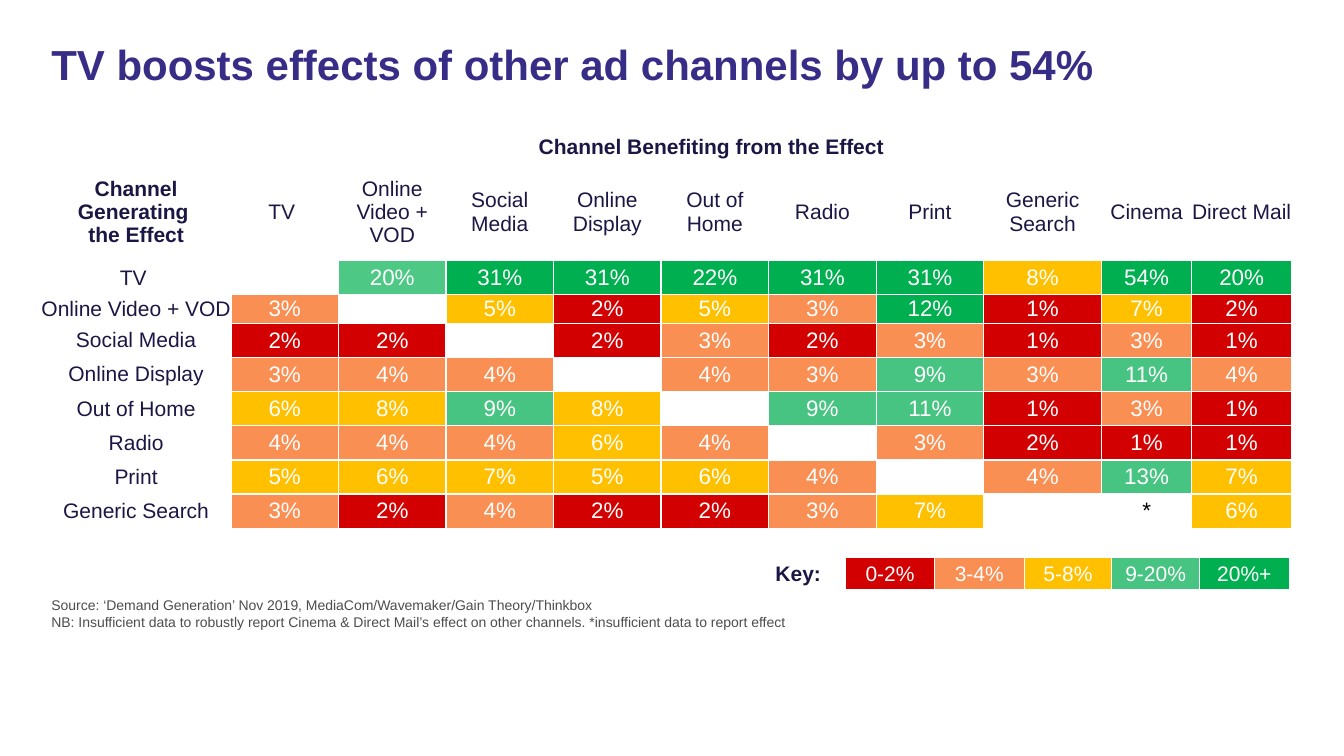
"""Build a slide with a heat-map table of how ad channels boost each other."""
from lxml.etree import SubElement
from pptx import Presentation
from pptx.dml.color import RGBColor
from pptx.enum.text import MSO_ANCHOR, MSO_AUTO_SIZE, PP_ALIGN
from pptx.oxml.ns import qn
from pptx.util import Cm, Pt

TITLE = "TV boosts effects of other ad channels by up to 54%"
SOURCE = (
    "Source: ‘Demand Generation’ Nov 2019, MediaCom/Wavemaker/Gain Theory/Thinkbox\v"
    "NB: Insufficient data to robustly report Cinema & Direct Mail’s effect on other channels. "
    "*insufficient data to report effect"
)
BENEFITING = "Channel Benefiting from the Effect"
GENERATING = "Channel Generating \nthe Effect"
CHANNELS = ["TV ", "Online Video + VOD", "Social Media", "Online Display", "Out of Home",
            "Radio", "Print", "Generic Search", "Cinema", "Direct Mail"]
EFFECTS = [
    [None, 20, 31, 31, 22, 31, 31, 8, 54, 20],
    [3, None, 5, 2, 5, 3, 12, 1, 7, 2],
    [2, 2, None, 2, 3, 2, 3, 1, 3, 1],
    [3, 4, 4, None, 4, 3, 9, 3, 11, 4],
    [6, 8, 9, 8, None, 9, 11, 1, 3, 1],
    [4, 4, 4, 6, 4, None, 3, 2, 1, 1],
    [5, 6, 7, 5, 6, 4, None, 4, 13, 7],
    [3, 2, 4, 2, 2, 3, 7, None, "*", 6],
]
NAVY, PURPLE, GREY, WHITE, BLACK = "1B1744", "372D87", "4D4D4D", "FFFFFF", "000000"
GREEN = "00B050"
BANDS = [(2, "0-2%", "D20000"), (4, "3-4%", "FA8F54"), (8, "5-8%", "FFC000"),
         (19, "9-20%", "47C482"), (100, "20%+", GREEN)]
SPECIAL_FILLS = {(0, 1): "4DC885", (1, 6): GREEN}

LEFT, WIDTH = 1.04, 31.5
COLUMN_WIDTHS = [4.78] + [2.71] * 7 + [2.97, 2.27, 2.52]
ROW_HEIGHTS = [0.82, 2.44, 0.86, 0.72] + [0.86] * 6
KEY_WIDTHS = [2.39, 2.24, 2.26, 2.21, 2.21, 2.26]


def color(hex_code):
    return RGBColor.from_string(hex_code)


def write(text_frame, text, size=15, hex_code=NAVY, bold=False, align=PP_ALIGN.CENTER,
          line_spacing=1.0):
    text_frame.text = text
    for paragraph in text_frame.paragraphs:
        paragraph.alignment = align
        paragraph.line_spacing = line_spacing
        paragraph.space_before = Pt(0)
        if not paragraph.runs:
            paragraph._p.get_or_add_endParaRPr().set("sz", str(size * 100))
        for run in paragraph.runs:
            run.font.name = "Arial"
            run.font.size = Pt(size)
            run.font.bold = bold
            run.font.color.rgb = color(hex_code)


def fill_placeholder(placeholder, text, top, height, **text_format):
    placeholder.left, placeholder.top = Cm(LEFT), Cm(top)
    placeholder.width, placeholder.height = Cm(WIDTH), Cm(height)
    frame = placeholder.text_frame
    frame.word_wrap = True
    frame.auto_size = MSO_AUTO_SIZE.NONE
    frame.vertical_anchor = MSO_ANCHOR.TOP
    write(frame, text, align=PP_ALIGN.LEFT, **text_format)


def add_grid(slide, left, top, widths, heights):
    frame = slide.shapes.add_table(len(heights), len(widths), Cm(left), Cm(top),
                                   Cm(sum(widths)), Cm(sum(heights)))
    table = frame.table
    table.first_row = table.horz_banding = False
    for column, width in zip(table.columns, widths):
        column.width = Cm(width)
    for row, height in zip(table.rows, heights):
        row.height = Cm(height)
    return table


def format_cell(cell, text="", fill=None, bottom_border=1, **text_format):
    cell.margin_left = cell.margin_right = cell.margin_top = cell.margin_bottom = 0
    cell.vertical_anchor = MSO_ANCHOR.MIDDLE
    write(cell.text_frame, text, **text_format)
    properties = cell._tc.get_or_add_tcPr()
    for side, points in (("L", 1), ("R", 1), ("T", 1), ("B", bottom_border)):
        border = SubElement(properties, qn(f"a:ln{side}"), w=str(Pt(points)))
        solid = SubElement(border, qn("a:solidFill"))
        SubElement(solid, qn("a:srgbClr"), val=WHITE)
    if fill:
        cell.fill.solid()
        cell.fill.fore_color.rgb = color(fill)
    else:
        cell.fill.background()


def band_fill(value):
    return next(fill for limit, _, fill in BANDS if value <= limit)


def add_effects_table(slide):
    table = add_grid(slide, LEFT, 3.31, COLUMN_WIDTHS, ROW_HEIGHTS)
    table.cell(0, 1).merge(table.cell(0, 9))
    for column in range(len(COLUMN_WIDTHS)):
        format_cell(table.cell(0, column), BENEFITING if column == 1 else "", bold=True)
    format_cell(table.cell(1, 0), GENERATING, bold=True)
    for column, channel in enumerate(CHANNELS):
        format_cell(table.cell(1, column + 1), channel)
    for row, values in enumerate(EFFECTS):
        format_cell(table.cell(row + 2, 0), CHANNELS[row])
        for column, value in enumerate(values):
            cell = table.cell(row + 2, column + 1)
            if value is None:
                format_cell(cell, fill=WHITE)
            elif value == "*":
                format_cell(cell, value, size=16, hex_code=BLACK)
            else:
                fill = SPECIAL_FILLS.get((row, column), band_fill(value))
                format_cell(cell, f"{value}%", fill, size=16, hex_code=WHITE)


def add_key(slide):
    key = add_grid(slide, 18.92, 14.05, KEY_WIDTHS, [0.84])
    format_cell(key.cell(0, 0), "Key:", WHITE, bottom_border=3, bold=True)
    for column, (_, label, fill) in enumerate(BANDS, start=1):
        format_cell(key.cell(0, column), label, fill, bottom_border=3, hex_code=WHITE)


def main():
    presentation = Presentation()
    presentation.slide_width, presentation.slide_height = Cm(33.87), Cm(19.05)
    slide = presentation.slides.add_slide(presentation.slide_layouts[1])
    fill_placeholder(slide.shapes.title, TITLE, 0.99, 2.84, size=30, hex_code=PURPLE,
                     bold=True, line_spacing=0.9)
    source = slide.placeholders[1]
    fill_placeholder(source, SOURCE, 14.91, 0.84, size=10, hex_code=GREY)
    properties = source.text_frame.paragraphs[0]._p.get_or_add_pPr()
    properties.set("marL", "0")
    properties.set("indent", "0")
    SubElement(properties, qn("a:buNone"))
    add_effects_table(slide)
    add_key(slide)
    presentation.save("out.pptx")


if __name__ == "__main__":
    main()
